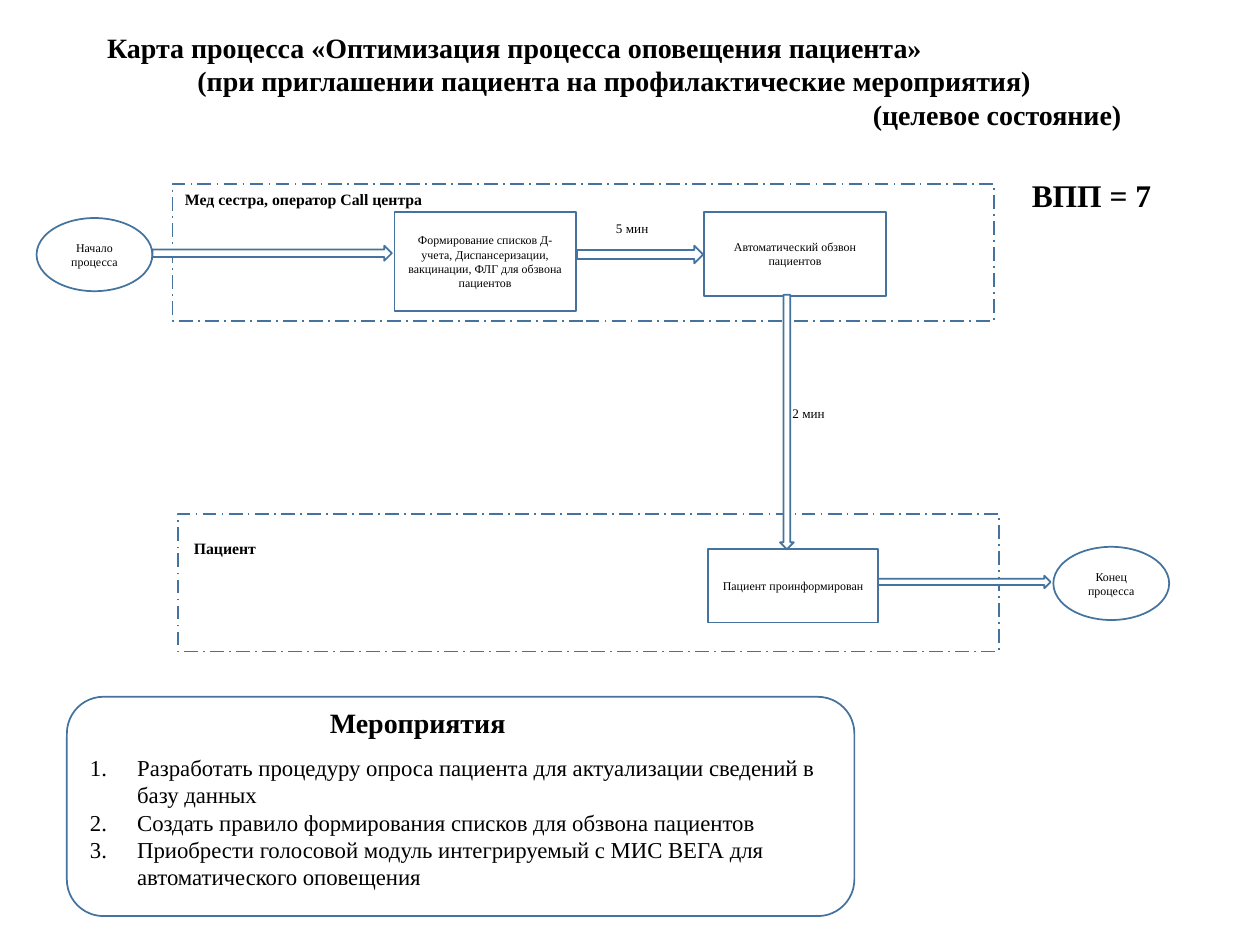
import pptx
import pptx.dml.color
import pptx.enum.dml
import pptx.enum.shapes
import pptx.enum.text
import pptx.oxml
import pptx.util

Pt = pptx.util.Pt
SHAPE = pptx.enum.shapes.MSO_SHAPE
ALIGN = pptx.enum.text.PP_ALIGN
ANCHOR = pptx.enum.text.MSO_ANCHOR


def color(hex_string):
    return pptx.dml.color.RGBColor.from_string(hex_string)


class ProcessMap:
    font_name = "Times New Roman"
    ink = "000000"
    paper = "FFFFFF"
    outline = "43739E"

    def __init__(self, slide):
        self.slide = slide

    def fill_text(self, text_frame, lines, size, bold=False, alignments=(ALIGN.LEFT,), anchor=ANCHOR.TOP):
        """Fill a frame; the last alignment holds for all further lines."""
        text_frame.word_wrap = True
        text_frame.auto_size = pptx.enum.text.MSO_AUTO_SIZE.NONE
        text_frame.vertical_anchor = anchor
        text_frame.text = "\n".join(lines)
        for index, paragraph in enumerate(text_frame.paragraphs):
            paragraph.alignment = alignments[min(index, len(alignments) - 1)]
            paragraph.font.name = self.font_name
            paragraph.font.size = Pt(size)
            paragraph.font.bold = bold
            paragraph.font.color.rgb = color(self.ink)

    def title(self, lines, alignments, left, top, width, height):
        title = self.slide.shapes.title
        title.left, title.top, title.width, title.height = map(Pt, (left, top, width, height))
        self.fill_text(title.text_frame, lines, 16, True, alignments)

    def shape(self, kind, left, top, width, height, outlined=True):
        shape = self.slide.shapes.add_shape(kind, Pt(left), Pt(top), Pt(width), Pt(height))
        shape.shadow.inherit = False
        shape.fill.solid()
        shape.fill.fore_color.rgb = color(self.paper)
        if outlined:
            shape.line.color.rgb = color(self.outline)
            shape.line.width = Pt(1)
        else:
            shape.line.fill.background()
        return shape

    def lane(self, left, top):
        lane = self.shape(SHAPE.RECTANGLE, left, top, 469.4, 78.5)
        lane.line.dash_style = pptx.enum.dml.MSO_LINE.LONG_DASH_DOT

    def step(self, text, left, top, width, height, kind=SHAPE.RECTANGLE):
        step = self.shape(kind, left, top, width, height)
        self.fill_text(step.text_frame, [text], 6.8, alignments=[ALIGN.CENTER], anchor=ANCHOR.MIDDLE)

    def terminal(self, text, left, top):
        self.step(text, left, top, 66.2, 41.8, SHAPE.OVAL)

    def label(self, text, left, top, width, height, size, bold=False):
        box = self.slide.shapes.add_textbox(Pt(left), Pt(top), Pt(width), Pt(height))
        self.fill_text(box.text_frame, [text], size, bold)

    def numbered_panel(self, heading, items, left, top, width, height):
        panel = self.shape(SHAPE.ROUNDED_RECTANGLE, left, top, width, height)
        self.fill_text(panel.text_frame, items, 13)
        panel.text_frame.margin_top = Pt(26.5)
        for paragraph in panel.text_frame.paragraphs:
            properties = paragraph._p.get_or_add_pPr()
            properties.set("marL", str(Pt(27)))
            properties.set("indent", str(-Pt(27)))
            # Numbering belongs before the default run properties
            properties.insert(0, pptx.oxml.parse_xml(
                '<a:buAutoNum xmlns:a="http://schemas.openxmlformats.org/drawingml/2006/main"'
                ' type="arabicPeriod"/>'))
        caption = self.shape(SHAPE.RECTANGLE, left + 98.6, top + 1.4, 203.8, 35.3, outlined=False)
        self.fill_text(caption.text_frame, [heading], 16, True, [ALIGN.CENTER])
        self.slide.shapes.add_group_shape([panel, caption])


def main():
    presentation = pptx.Presentation()
    presentation.slide_width, presentation.slide_height = Pt(720), Pt(540)
    process = ProcessMap(presentation.slides.add_slide(presentation.slide_layouts[5]))

    # Title and total time
    process.title(
        ["Карта процесса «Оптимизация процесса оповещения пациента»",
         "(при приглашении пациента на профилактические мероприятия)",
         "(целевое состояние)"],
        [ALIGN.LEFT, ALIGN.CENTER, ALIGN.RIGHT], 54, 13.7, 594, 65.5)
    process.label("ВПП = 7", 582.5, 97.2, 92.2, 28.8, 18, True)

    # Lanes
    process.lane(98.6, 105.1)
    process.lane(101.5, 293.8)
    process.label("Мед сестра, оператор Call центра", 98.6, 105.1, 174.2, 18, 9, True)
    process.label("Пациент", 103.7, 304.6, 67, 23.8, 9, True)

    # Steps
    process.terminal("Начало процесса", 20.9, 124.6)
    process.step("Формирование списков Д-учета, Диспансеризации, вакцинации, ФЛГ для обзвона пациентов",
                 225.4, 121, 103.7, 56.9)
    process.step("Автоматический обзвон пациентов", 402.5, 121, 103.7, 48.2)
    process.step("Пациент проинформирован", 404.6, 313.9, 97.2, 41.8)
    process.terminal("Конец процесса", 601.9, 312.5)

    # Block arrows with durations
    process.shape(SHAPE.RIGHT_ARROW, 87.1, 140.4, 136.8, 8.6)
    process.shape(SHAPE.RIGHT_ARROW, 329.8, 140.4, 72, 10.1)
    process.shape(SHAPE.DOWN_ARROW, 445.7, 168.5, 7.9, 145.4)
    process.shape(SHAPE.RIGHT_ARROW, 501.8, 329, 98.6, 7.2)
    process.label("5 мин", 344.9, 122.4, 42.5, 21.6, 7.5)
    process.label("2 мин", 445.7, 228.2, 42.5, 21.6, 7.5)

    # Measures
    process.numbered_panel(
        "Мероприятия",
        ["Разработать процедуру опроса пациента для актуализации сведений в базу данных",
         "Создать правило формирования списков для обзвона пациентов",
         "Приобрести голосовой модуль интегрируемый с МИС ВЕГА для автоматического оповещения"],
        38.2, 398.2, 450, 125.3)

    presentation.save("out.pptx")


if __name__ == "__main__":
    main()
